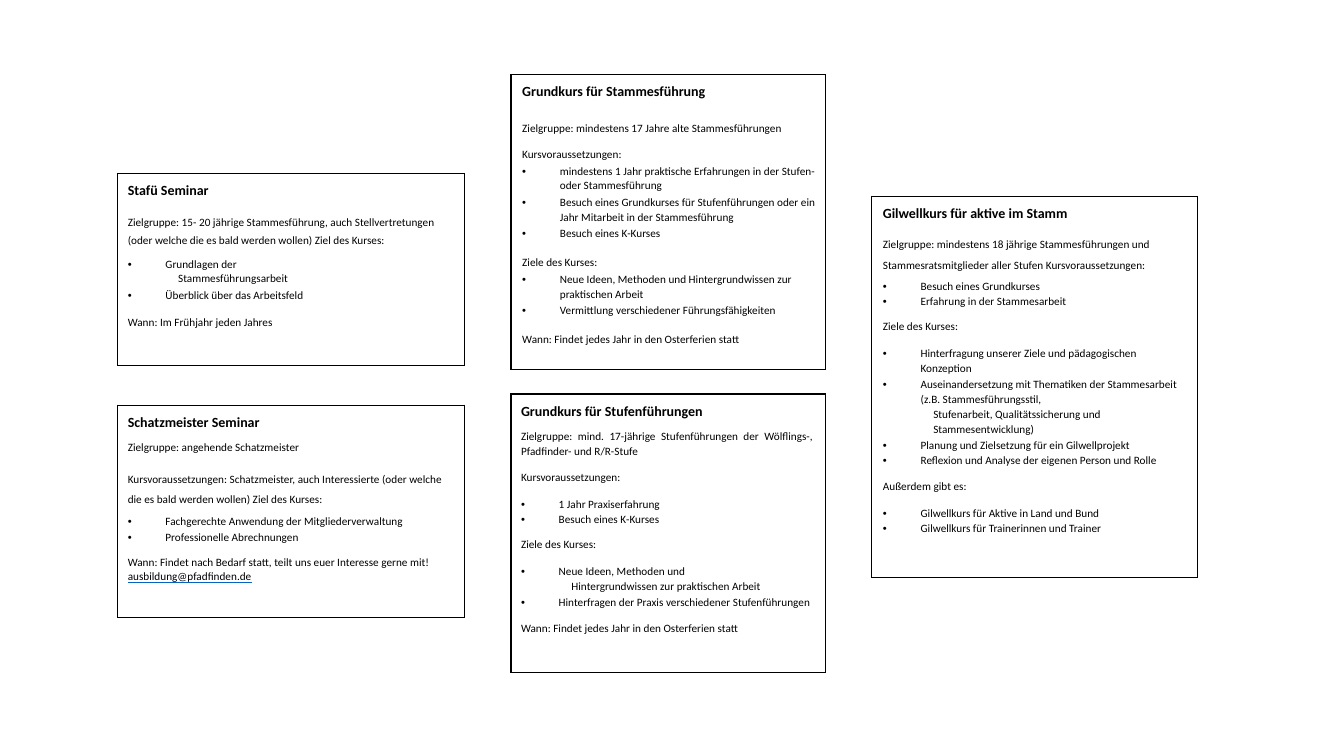
from collections import namedtuple

from lxml.etree import SubElement
from pptx import Presentation
from pptx.dml.color import RGBColor
from pptx.enum.text import PP_ALIGN
from pptx.oxml.ns import qn
from pptx.util import Cm, Pt

COLORS = {"ink": "000000", "link": "0563C1"}
FONT = "Calibri"
BULLET_INDENT = Cm(0.95)
SUB_INDENT = Cm(1.27)

Box = namedtuple("Box", "left top width height")
Line = namedtuple("Line", "kind text after spacing link", defaults=(0, 1.07, ""))

# Course cards: box, left and right inset, title, space after title, lines
CARDS = [
    (Box(2.97, 4.37, 8.74, 4.85), (0.25, 0.18), "Stafü Seminar", 9.1, [
        Line("text", "Zielgruppe: 15- 20 jährige Stammesführung, auch Stellvertretungen "
             "(oder welche die es bald werden wollen) Ziel des Kurses:", 6.7, 1.27),
        Line("bullet", "Grundlagen der"),
        Line("sub", "Stammesführungsarbeit", 1.4),
        Line("bullet", "Überblick über das Arbeitsfeld", 8.7),
        Line("text", "Wann: Im Frühjahr jeden Jahres"),
    ]),
    (Box(12.88, 1.88, 7.92, 7.44), (0.28, 0.2), "Grundkurs für Stammesführung", 6.2, [
        Line("text", "Zielgruppe: mindestens 17 Jahre alte Stammesführungen "
             "Kursvoraussetzungen:", 1.1, 1.9),
        Line("bullet", "mindestens 1 Jahr praktische Erfahrungen in der Stufen- "
             "oder Stammesführung", 1.1, 1.08),
        Line("bullet", "Besuch eines Grundkurses für Stufenführungen oder ein "
             "Jahr Mitarbeit in der Stammesführung", 1.1, 1.08),
        Line("bullet", "Besuch eines K-Kurses", 10.5),
        Line("text", "Ziele des Kurses:", 1.1),
        Line("bullet", "Neue Ideen, Methoden und Hintergrundwissen zur "
             "praktischen Arbeit", 1.1, 1.08),
        Line("bullet", "Vermittlung verschiedener Führungsfähigkeiten", 10.5, 1.08),
        Line("text", "Wann: Findet jedes Jahr in den Osterferien statt"),
    ]),
    (Box(12.88, 9.93, 7.92, 7.01), (0.25, 0.3), "Grundkurs für Stufenführungen", 6.2, [
        Line("justified", "Zielgruppe: mind. 17-jährige Stufenführungen der Wölflings-, "
             "Pfadfinder- und R/R-Stufe", 8.1),
        Line("text", "Kursvoraussetzungen:", 9),
        Line("bullet", "1 Jahr Praxiserfahrung"),
        Line("bullet", "Besuch eines K-Kurses", 7.1),
        Line("text", "Ziele des Kurses:", 9),
        Line("bullet", "Neue Ideen, Methoden und"),
        Line("sub", "Hintergrundwissen zur praktischen Arbeit", 0.9),
        Line("bullet", "Hinterfragen der Praxis verschiedener Stufenführungen", 7.9, 1.08),
        Line("text", "Wann: Findet jedes Jahr in den Osterferien statt"),
    ]),
    (Box(2.97, 10.21, 8.74, 5.36), (0.25, 0.2), "Schatzmeister Seminar", 6.2, [
        Line("text", "Zielgruppe: angehende Schatzmeister", 8),
        Line("text", "Kursvoraussetzungen: Schatzmeister, auch Interessierte (oder "
             "welche die es bald werden wollen) Ziel des Kurses:", 5.1, 1.48),
        Line("bullet", "Fachgerechte Anwendung der Mitgliederverwaltung", 0.7, 1.1),
        Line("bullet", "Professionelle Abrechnungen", 7),
        Line("text", "Wann: Findet nach Bedarf statt, teilt uns euer Interesse gerne mit! ",
             link="ausbildung@pfadfinden.de"),
    ]),
    (Box(21.97, 4.95, 8.2, 9.6), (0.28, 0.2), "Gilwellkurs für aktive im Stamm", 6.1, [
        Line("text", "Zielgruppe: mindestens 18 jährige Stammesführungen und "
             "Stammesratsmitglieder aller Stufen Kursvoraussetzungen:", 5, 1.49),
        Line("bullet", "Besuch eines Grundkurses"),
        Line("bullet", "Erfahrung in der Stammesarbeit", 7),
        Line("text", "Ziele des Kurses:", 9),
        Line("bullet", "Hinterfragung unserer Ziele und pädagogischen Konzeption", 0.8, 1.09),
        Line("bullet", "Auseinandersetzung mit Thematiken der Stammesarbeit "
             "(z.B. Stammesführungsstil,", 0, 1.09),
        Line("sub", "Stufenarbeit, Qualitätssicherung und"),
        Line("sub", "Stammesentwicklung)", 1.1),
        Line("bullet", "Planung und Zielsetzung für ein Gilwellprojekt"),
        Line("bullet", "Reflexion und Analyse der eigenen Person und Rolle", 7.8, 1.09),
        Line("text", "Außerdem gibt es:", 9),
        Line("bullet", "Gilwellkurs für Aktive in Land und Bund"),
        Line("bullet", "Gilwellkurs für Trainerinnen und Trainer"),
    ]),
]


def add_color(parent, name):
    fill = SubElement(parent, qn("a:solidFill"))
    SubElement(fill, qn("a:srgbClr"), val=COLORS[name])


def add_borders(cell):
    properties = cell._tc.get_or_add_tcPr()
    for side in ("lnL", "lnR", "lnT", "lnB"):
        add_color(SubElement(properties, qn(f"a:{side}"), w=str(Pt(1))), "ink")


def indent(para, kind):
    properties = para._p.get_or_add_pPr()
    if kind == "sub":
        properties.set("marL", str(SUB_INDENT))
    elif kind == "bullet":
        properties.set("marL", str(BULLET_INDENT))
        properties.set("indent", str(-BULLET_INDENT))
        color = SubElement(properties, qn("a:buClr"))
        SubElement(color, qn("a:srgbClr"), val=COLORS["ink"])
        SubElement(properties, qn("a:buFont"), typeface="Arial")
        SubElement(properties, qn("a:buChar"), char="•")


def add_link(para, text):
    span = para.add_run()
    span.text = text
    span.font.underline = True
    add_color(SubElement(span.font._element, qn("a:uFill")), "link")


def write_line(para, line):
    is_title = line.kind == "title"
    para.add_run().text = line.text
    para.line_spacing = line.spacing
    para.space_before = Pt(0)
    para.space_after = Pt(line.after)
    para.alignment = PP_ALIGN.JUSTIFY if line.kind == "justified" else PP_ALIGN.LEFT
    indent(para, line.kind)
    para.font.name = FONT
    para.font.size = Pt(10 if is_title else 8)
    para.font.bold = is_title
    para.font.color.rgb = RGBColor.from_string(COLORS["ink"])
    if line.link:
        add_link(para, line.link)


def add_card(page, box, insets, title, title_after, lines):
    table = page.shapes.add_table(1, 1, *map(Cm, box)).table
    table.first_row = table.horz_banding = False
    cell = table.cell(0, 0)
    add_borders(cell)
    cell.fill.background()
    cell.margin_left, cell.margin_right = map(Cm, insets)
    cell.margin_top, cell.margin_bottom = Cm(0.2), Cm(0)
    frame = cell.text_frame
    for number, line in enumerate([Line("title", title, title_after), *lines]):
        write_line(frame.add_paragraph() if number else frame.paragraphs[0], line)


def main():
    deck = Presentation()
    deck.slide_width, deck.slide_height = Cm(33.87), Cm(19.05)
    page = deck.slides.add_slide(deck.slide_layouts[6])
    for card in CARDS:
        add_card(page, *card)
    deck.save("out.pptx")


if __name__ == "__main__":
    main()
